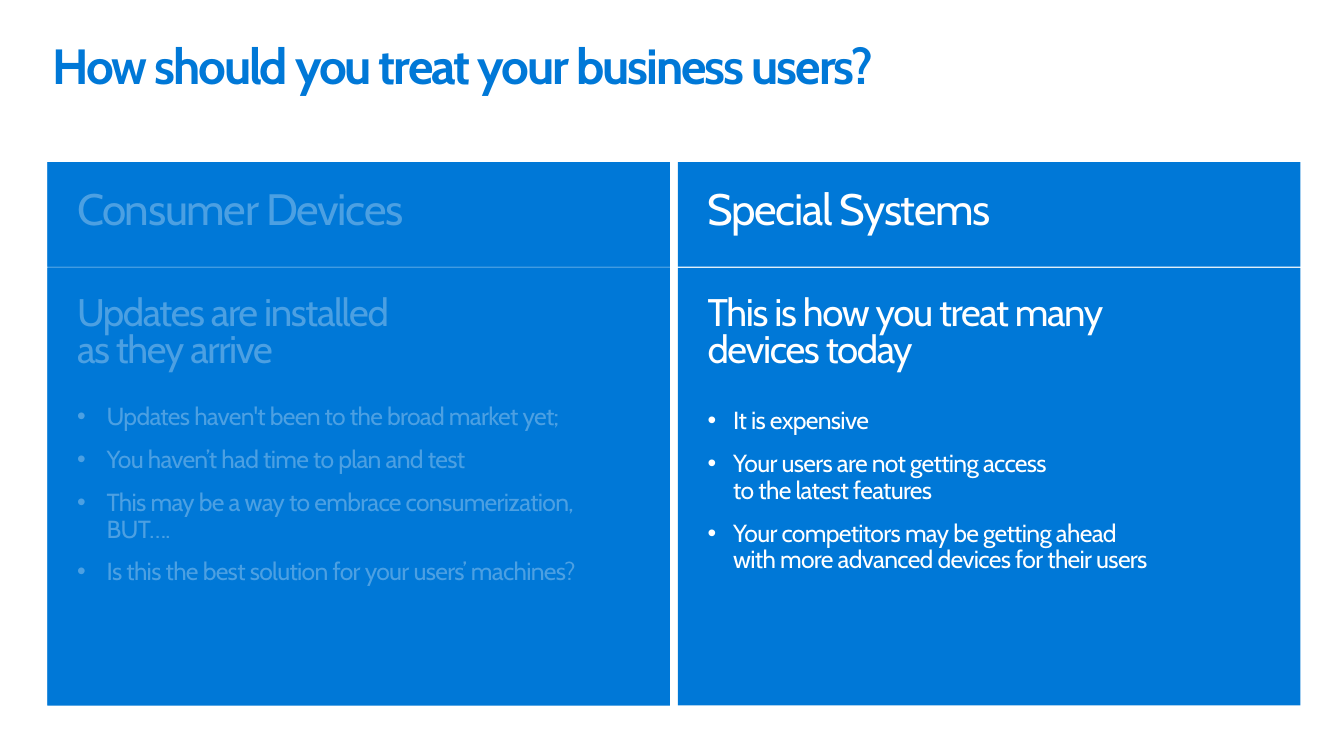
from lxml import etree
from pptx import Presentation
from pptx.dml.color import RGBColor
from pptx.enum.shapes import MSO_SHAPE
from pptx.enum.text import MSO_ANCHOR, PP_ALIGN
from pptx.oxml.ns import qn
from pptx.util import Pt

RECTANGLE = MSO_SHAPE.RECTANGLE
TOP = MSO_ANCHOR.TOP
LEFT = PP_ALIGN.LEFT
BLUE = "0078D7"
WHITE = "FFFFFF"
FONT = "Cabin"

MARGIN = 34.56
PANEL_TOP = 118.08
PANEL_WIDTH = 453.6
PANEL_HEIGHT = 396
PANEL_PITCH = 459.36
HEADER_HEIGHT = 76.32
DIVIDER = 0.72
PANEL_INSETS = (21.6, 21.6, 21.6, 11.52)

TITLE = {"size": 36, "color": BLUE, "bold": True, "tracking": -1.5, "line_spacing": 0.9}
HEADER = {"size": 32, "color": WHITE, "tracking": -1, "line_spacing": 0.8}
LEAD = {"size": 28, "color": WHITE, "tracking": -1, "line_spacing": 0.8}
BULLET = {"size": 18, "color": WHITE, "tracking": -0.5, "line_spacing": 0.9, "space_after": 11.8}

PANELS = [
    {
        "header": "Consumer Devices",
        "lead": "Updates are installed\vas they arrive",
        "lead_gap": 24,
        "indent": 21.6,
        "bullets": [
            "Updates haven't been to the broad market yet;",
            "You haven’t had time to plan and test",
            "This may be a way to embrace consumerization, BUT….",
            "Is this the best solution for your users’ machines?",
        ],
    },
    {
        "header": "Special Systems",
        "lead": "This is how you treat many\vdevices today",
        "lead_gap": 27,
        "indent": 18.72,
        "bullets": [
            "It is expensive",
            "Your users are not getting access\vto the latest features",
            "Your competitors may be getting ahead\vwith more advanced devices for their users",
        ],
    },
]


def rgb(value):
    """Turn a hex string into a colour."""
    return RGBColor.from_string(value)


def set_frame(frame, insets):
    """Make a text frame wrap from the top with the given insets."""
    frame.word_wrap = True
    frame.vertical_anchor = TOP
    for side, inset in zip(("left", "top", "right", "bottom"), insets):
        setattr(frame, f"margin_{side}", Pt(inset))


def write(para, text, style, indent=0):
    """Write styled text in a paragraph, with a bullet when indented."""
    para.text = text
    para.alignment = LEFT
    para.line_spacing = style["line_spacing"]
    para.space_before = Pt(0)
    para.space_after = Pt(style.get("space_after", 0))
    if indent:
        para.level = 1
        properties = para._p.get_or_add_pPr()
        properties.set("marL", str(Pt(indent)))
        properties.set("indent", str(-Pt(indent)))
        etree.SubElement(properties, qn("a:buFont")).set("typeface", "Arial")
        etree.SubElement(properties, qn("a:buChar")).set("char", "•")
    font_values = {"name": FONT, "size": Pt(style["size"]), "bold": style.get("bold", False)}
    for span in para.runs:
        for name, value in font_values.items():
            setattr(span.font, name, value)
        span.font.color.rgb = rgb(style["color"])
        span._r.get_or_add_rPr().set("spc", str(int(style["tracking"] * 100)))


def add_block(page, left, top, width, height):
    """Add a plain blue rectangle."""
    box = page.shapes.add_shape(RECTANGLE, Pt(left), Pt(top), Pt(width), Pt(height))
    box.shadow.inherit = False
    box.fill.solid()
    box.fill.fore_color.rgb = rgb(BLUE)
    box.line.fill.background()
    set_frame(box.text_frame, PANEL_INSETS)
    return box


def add_title(page, left, top, width, height, text):
    """Add the slide title."""
    box = page.shapes.add_textbox(Pt(left), Pt(top), Pt(width), Pt(height))
    set_frame(box.text_frame, (16.5, 7.2, 11.52, 7.2))
    write(box.text_frame.paragraphs[0], text, TITLE)


def add_panel(page, left, top, width, height, panel):
    """Add a header block above a body block with a lead and bullets."""
    header = add_block(page, left, top, width, HEADER_HEIGHT)
    write(header.text_frame.paragraphs[0], panel["header"], HEADER)
    offset = HEADER_HEIGHT + DIVIDER
    frame = add_block(page, left, top + offset, width, height - offset).text_frame
    write(frame.paragraphs[0], panel["lead"], {**LEAD, "space_after": panel["lead_gap"]})
    for text in panel["bullets"]:
        write(frame.add_paragraph(), text, BULLET, panel["indent"])


def add_veil(page, left, top, width, height):
    """Dim a panel with a translucent blue rectangle."""
    veil = add_block(page, left, top, width, height)
    color = veil._element.spPr.find(qn("a:solidFill"))[0]
    etree.SubElement(color, qn("a:alpha")).set("val", "70000")


def main():
    """Build and save the slide."""
    deck = Presentation()
    deck.slide_width = Pt(979.2)
    deck.slide_height = Pt(550.8)
    page = deck.slides.add_slide(deck.slide_layouts[6])
    add_title(page, 21.6, 23.04, 936, 72, "How should you treat your business users?")
    for index, panel in enumerate(PANELS):
        left = MARGIN + index * PANEL_PITCH
        add_panel(page, left, PANEL_TOP, PANEL_WIDTH, PANEL_HEIGHT, panel)
    add_veil(page, MARGIN, PANEL_TOP, PANEL_WIDTH, PANEL_HEIGHT)
    deck.save("out.pptx")


if __name__ == "__main__":
    main()
